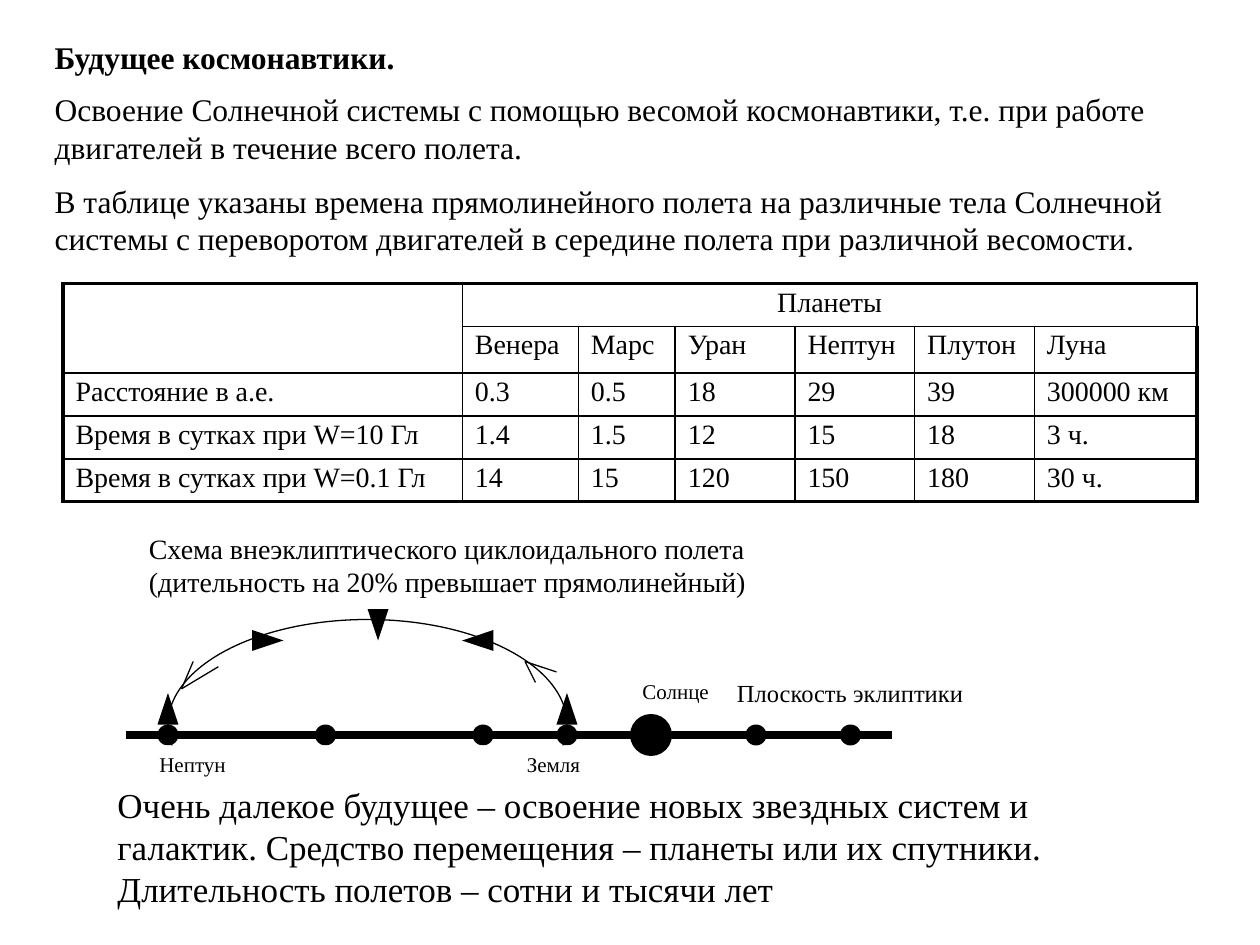
from dataclasses import dataclass

from lxml.etree import SubElement as Sub
from pptx import Presentation
from pptx.dml.color import RGBColor as Rgb
from pptx.enum.shapes import MSO_CONNECTOR as Link, MSO_SHAPE as Form
from pptx.enum.text import MSO_ANCHOR as Anchor, MSO_AUTO_SIZE as Fit, PP_ALIGN as Align
from pptx.oxml.ns import qn
from pptx.util import Inches, Pt


@dataclass
class Theme:
    font: str = "Times New Roman"
    ink: str = "000000"
    page: str = "FFFFFF"
    head: int = 18
    close: int = 20
    cell: int = 16
    plane: int = 14
    label: int = 12
    thin: float = 0.75
    rule: float = 1
    edge: float = 2.25
    axis: float = 4.5


look = Theme()
deck = Presentation()
deck.slide_width, deck.slide_height = Inches(10), Inches(7.5)
slide = deck.slides.add_slide(deck.slide_layouts[1])
unit = deck.slide_width / 120


def grid(*spots):
    return [round(spot * unit) for spot in spots]


def write(frame, *lines, size, bold=False, align=Align.LEFT, gap=0, pitch=1):
    frame.word_wrap = True
    for row, line in enumerate(lines):
        para = frame.add_paragraph() if row else frame.paragraphs[0]
        para.text = line
        para.alignment, para.line_spacing = align, pitch
        para.space_before = Pt(gap if row else 0)
        for run in para.runs:
            run.font.name, run.font.size, run.font.bold = look.font, Pt(size), bold
            run.font.color.rgb = Rgb.from_string(look.ink)


title, body = slide.placeholders
for holder, spot in ((title, (4, 3, 109, 5)), (body, (4, 8, 109, 18))):
    holder.left, holder.top, holder.width, holder.height = grid(*spot)
    holder.text_frame.auto_size = Fit.NONE
    holder.text_frame.vertical_anchor = Anchor.TOP
write(title.text_frame, "Будущее космонавтики.", size=look.head, bold=True)
write(
    body.text_frame,
    "Освоение Солнечной системы с помощью весомой космонавтики, т.е. при работе двигателей в течение всего полета.",
    "В таблице указаны времена прямолинейного полета на различные тела Солнечной системы с переворотом двигателей в середине полета при различной весомости.",
    size=look.head, gap=look.head / 2,
)
for para in body.text_frame.paragraphs:
    props = para._p.get_or_add_pPr()
    props.set("marL", "0")
    props.set("indent", "0")
    Sub(props, qn("a:buNone"))

data = [
    ["", "Планеты", "", "", "", "", ""],
    ["", "Венера", "Марс", "Уран", "Нептун", "Плутон", "Луна"],
    ["Расстояние в а.е.", "0.3", "0.5", "18", "29", "39", "300000 км"],
    ["Время в сутках при W=10 Гл", "1.4", "1.5", "12", "15", "18", "3 ч."],
    ["Время в сутках при W=0.1 Гл", "14", "15", "120", "150", "180", "30 ч."],
]
rows, cols = len(data), len(data[0])
table = slide.shapes.add_table(rows, cols, *grid(6, 27, 108, 20.4)).table
table.first_row = table.horz_banding = False
for col, wide in zip(table.columns, (3.17, 0.92, 0.77, 0.95, 0.95, 0.95, 1.29)):
    col.width = Inches(wide)
for row, tall in zip(table.rows, (0.34, 0.37, 0.34, 0.34, 0.34)):
    row.height = Inches(tall)
table.cell(0, 0).merge(table.cell(1, 0))
table.cell(0, 1).merge(table.cell(0, cols - 1))
for r, line in enumerate(data):
    for c, word in enumerate(line):
        cell = table.cell(r, c)
        align = Align.CENTER if r == 0 else Align.LEFT
        write(cell.text_frame, word, size=look.cell, align=align, pitch=0.9)
        cell.text_frame.paragraphs[0].font.size = Pt(look.cell)
        props = cell._tc.get_or_add_tcPr()
        outer = {"L": c == 0, "R": c == cols - 1, "T": r == 0, "B": r == rows - 1}
        for side, far in outer.items():
            width = Pt(look.edge if far else look.rule)
            border = Sub(props, qn(f"a:ln{side}"), w=str(width))
            Sub(Sub(border, qn("a:solidFill")), qn("a:srgbClr"), val=look.ink)
        cell.fill.background()

dots = [(Form.OVAL, x, 69, 2, 2, 0, look.ink) for x in (71, 80, 30, 45, 53, 15)]
ships = [
    (Form.ISOSCELES_TRIANGLE, x, y, 2, 3, turn, look.ink)
    for x, y, turn in ((53, 66, 0), (44.5, 59.5, 270), (15, 66, 0), (35, 58, 180), (24.5, 59.5, 90))
]
sun = (Form.OVAL, 60, 68, 4, 4, 0, look.ink)
orbit = (Form.OVAL, 16, 59, 38, 20, 0, None)
mask = (Form.RECTANGLE, 15, 71, 42, 9, 0, look.page)

plane = [((12, 70), [(85, 70)], look.axis)]
barbs = [
    ((50, 63), [(51, 65), (53, 64)], look.thin),
    ((17.3, 65.6), [(20.8, 63.5), (18.4, 63)], look.thin),
]
for group in (plane, barbs):
    for tip, ends, width in group:
        home = slide.shapes if group is plane else slide.shapes.add_group_shape().shapes
        for end in ends:
            line = home.add_connector(Link.STRAIGHT, *grid(*tip, *end))
            line.line.color.rgb = Rgb.from_string(look.ink)
            line.line.width = Pt(width)
            Sub(line._element.spPr, qn("a:effectLst"))
    if group is barbs:
        continue
    for form, x, y, w, h, turn, fill in (sun, *dots, orbit, mask, *ships):
        mark = slide.shapes.add_shape(form, *grid(x, y, w, h))
        mark.shadow.inherit = False
        mark.rotation = turn
        if fill:
            mark.fill.solid()
            mark.fill.fore_color.rgb = Rgb.from_string(fill)
            mark.line.fill.background()
        else:
            mark.fill.background()
            mark.line.color.rgb = Rgb.from_string(look.ink)
            mark.line.width = Pt(look.thin)

notes = [
    ("Солнце", (60, 64, 15, 3.6), look.label),
    ("Земля", (49, 71, 15, 3.6), look.label),
    ("Нептун", (14, 71, 15, 3.6), look.label),
    ("Плоскость эклиптики", (69, 64, 32, 4), look.plane),
    ("Схема внеэклиптического циклоидального полета\n(дительность на 20% превышает прямолинейный)",
     (13, 50, 63, 7.6), look.cell),
    ("Очень далекое будущее – освоение новых звездных систем и галактик. Средство перемещения – планеты или их спутники. Длительность полетов – сотни и тысячи лет",
     (10, 74, 97, 13.2), look.close),
]
for words, spot, size in notes:
    write(slide.shapes.add_textbox(*grid(*spot)).text_frame, words, size=size)

deck.save("out.pptx")
